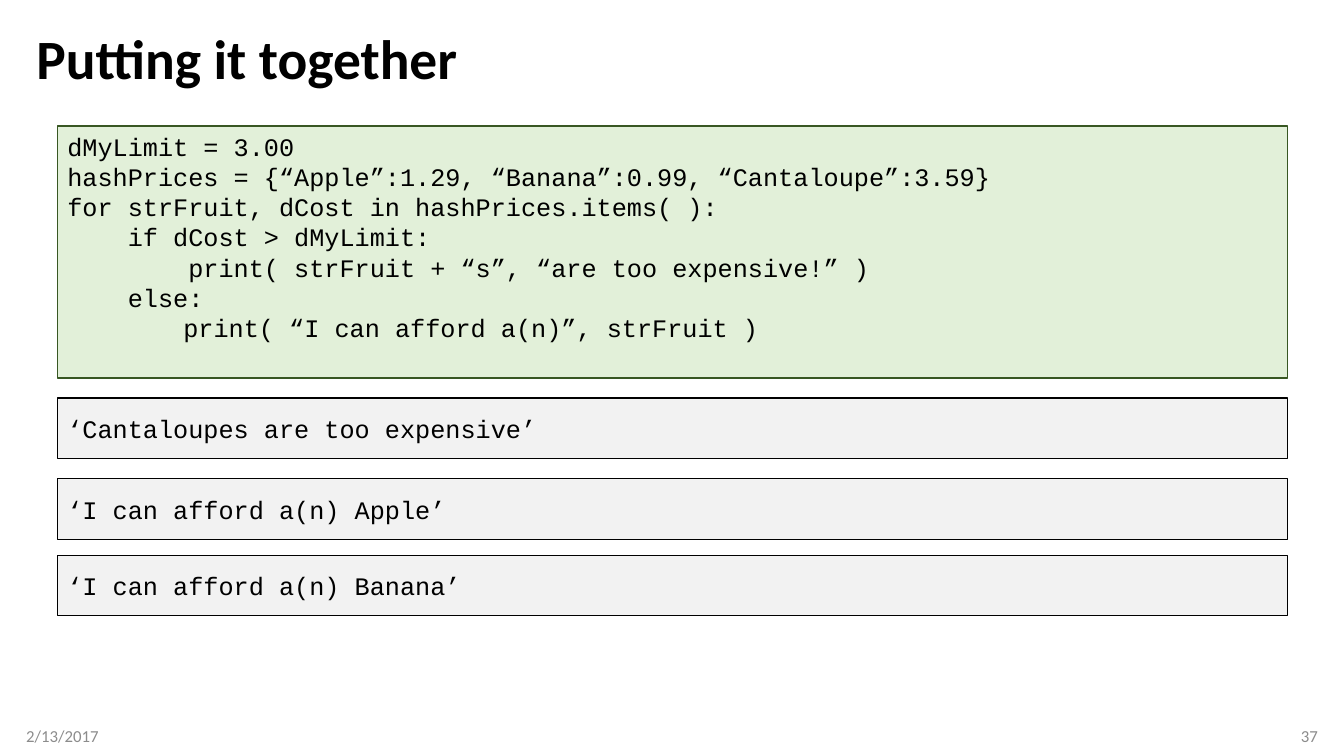
from dataclasses import dataclass

from pptx import Presentation
from pptx.dml.color import RGBColor
from pptx.enum.shapes import MSO_SHAPE
from pptx.enum.text import MSO_ANCHOR, MSO_AUTO_SIZE, PP_ALIGN
from pptx.slide import Slide
from pptx.text.text import TextFrame, _Paragraph
from pptx.util import Inches, Length, Pt

RECTANGLE = MSO_SHAPE.RECTANGLE
TOP, MIDDLE = MSO_ANCHOR.TOP, MSO_ANCHOR.MIDDLE
LEFT, RIGHT = PP_ALIGN.LEFT, PP_ALIGN.RIGHT
NO_AUTOFIT = MSO_AUTO_SIZE.NONE

COLORS = {
    "text": "000000",
    "footer": "8C8C8C",
    "code_fill": "E2F0D9",
    "code_line": "385723",
    "output_fill": "F2F2F2",
    "output_line": "000000",
}
HEADING_FONT, CODE_FONT = "Calibri", "Courier New"

# The slide is a grid of 1333 columns by 750 rows, 0.01 inch each.
COLUMNS, ROWS = 1333, 750
MARGIN, MARGIN_WIDTH = 26, 1281
PANEL_LEFT, PANEL_WIDTH = 57, 1220
FOOTER_TOP, FOOTER_WIDTH, FOOTER_HEIGHT = 710, 300, 40
OUTPUT_HEIGHT = 60
CODE_STEP = 60  # four monospaced characters at 18 pt


@dataclass(frozen=True)
class Line:
    text: str
    indent: int = 0


@dataclass(frozen=True)
class Panel:
    top: int
    height: int
    role: str
    anchor: MSO_ANCHOR
    lines: tuple[Line, ...]


@dataclass(frozen=True)
class Footer:
    text: str
    left: int
    align: PP_ALIGN


CODE = (
    Line("dMyLimit = 3.00"),
    Line("hashPrices = {“Apple”:1.29, “Banana”:0.99, “Cantaloupe”:3.59}"),
    Line("for strFruit, dCost in hashPrices.items( ):"),
    Line("if dCost > dMyLimit:", CODE_STEP),
    Line("print( strFruit + “s”, “are too expensive!” )", 2 * CODE_STEP),
    Line("else:", CODE_STEP),
    Line("print( “I can afford a(n)”, strFruit )", 115),
)
OUTPUTS = (
    (395, "‘Cantaloupes are too expensive’"),
    (475, "‘I can afford a(n) Apple’"),
    (551, "‘I can afford a(n) Banana’"),
)
PANELS = (
    Panel(125, 250, "code", TOP, CODE),
    *(Panel(top, OUTPUT_HEIGHT, "output", MIDDLE, (Line(text),)) for top, text in OUTPUTS),
)
FOOTERS = (
    Footer("2/13/2017", MARGIN, LEFT),
    Footer("37", MARGIN + MARGIN_WIDTH - FOOTER_WIDTH, RIGHT),
)


def cells(count: int) -> Length:
    return Inches(count / 100)


def color(key: str) -> RGBColor:
    return RGBColor.from_string(COLORS[key])


def add_run(paragraph: _Paragraph, text: str, font: str, size: float,
            color_key: str, bold: bool = False) -> None:
    run = paragraph.add_run()
    run.text = text
    run.font.name = font
    run.font.size = Pt(size)
    run.font.bold = bold
    run.font.color.rgb = color(color_key)


def add_code_lines(frame: TextFrame, lines: tuple[Line, ...]) -> None:
    for number, line in enumerate(lines):
        paragraph = frame.add_paragraph() if number else frame.paragraphs[0]
        paragraph.alignment = LEFT
        if line.indent:
            properties = paragraph._p.get_or_add_pPr()
            properties.set("marL", str(cells(line.indent)))
            properties.set("indent", "0")
        add_run(paragraph, line.text, CODE_FONT, 18, "text")


def set_title(slide: Slide, text: str) -> None:
    title = slide.shapes.title
    title.left, title.top = cells(MARGIN), cells(25)
    title.width, title.height = cells(MARGIN_WIDTH), cells(72)
    frame = title.text_frame
    frame.auto_size = NO_AUTOFIT
    frame.vertical_anchor = MIDDLE
    heading = frame.paragraphs[0]
    heading.alignment = LEFT
    heading.line_spacing = 0.9
    add_run(heading, text, HEADING_FONT, 39.6, "text", bold=True)


def add_panel(slide: Slide, panel: Panel) -> None:
    box = slide.shapes.add_shape(RECTANGLE, cells(PANEL_LEFT), cells(panel.top),
                                 cells(PANEL_WIDTH), cells(panel.height))
    box.shadow.inherit = False
    box.fill.solid()
    box.fill.fore_color.rgb = color(f"{panel.role}_fill")
    box.line.color.rgb = color(f"{panel.role}_line")
    box.line.width = Pt(1)
    box.text_frame.word_wrap = True
    box.text_frame.vertical_anchor = panel.anchor
    add_code_lines(box.text_frame, panel.lines)


def add_footer(slide: Slide, footer: Footer) -> None:
    box = slide.shapes.add_textbox(cells(footer.left), cells(FOOTER_TOP),
                                   cells(FOOTER_WIDTH), cells(FOOTER_HEIGHT))
    frame = box.text_frame
    frame.word_wrap = True
    frame.vertical_anchor = MIDDLE
    if footer.align == LEFT:
        frame.margin_left = 0
    else:
        frame.margin_right = 0
    paragraph = frame.paragraphs[0]
    paragraph.alignment = footer.align
    add_run(paragraph, footer.text, HEADING_FONT, 12, "footer")


def main() -> None:
    presentation = Presentation()
    presentation.slide_width = cells(COLUMNS)
    presentation.slide_height = cells(ROWS)
    title_only = presentation.slide_layouts.get_by_name("Title Only")
    slide = presentation.slides.add_slide(title_only)
    set_title(slide, "Putting it together")
    for footer in FOOTERS:
        add_footer(slide, footer)
    for panel in PANELS:
        add_panel(slide, panel)
    presentation.save("out.pptx")


if __name__ == "__main__":
    main()
